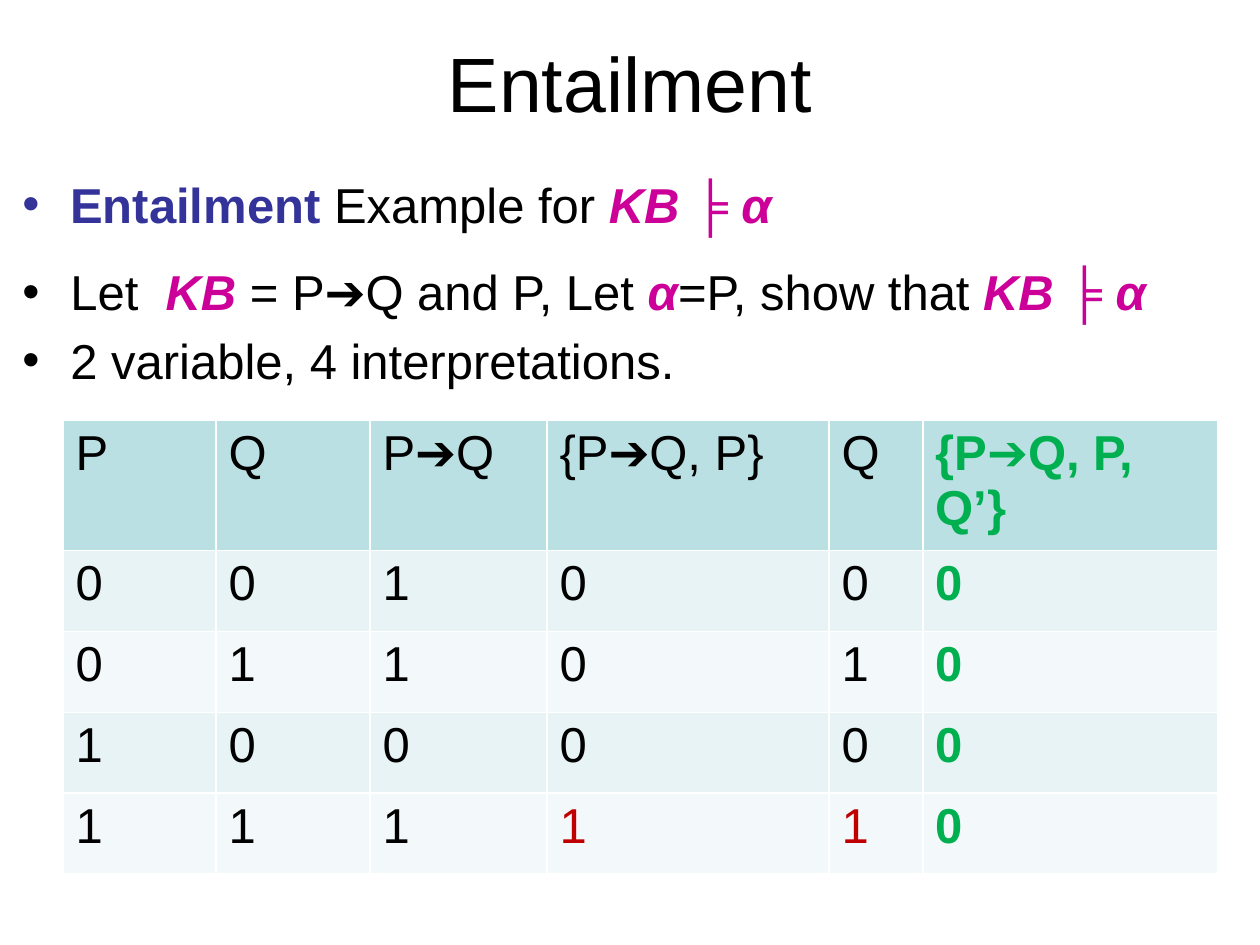
from dataclasses import dataclass

from lxml import etree
from pptx import Presentation
from pptx.dml.color import RGBColor
from pptx.enum.text import MSO_ANCHOR, PP_ALIGN
from pptx.oxml.ns import qn
from pptx.util import Emu, Pt

CENTER, LEFT = PP_ALIGN.CENTER, PP_ALIGN.LEFT
MIDDLE, TOP = MSO_ANCHOR.MIDDLE, MSO_ANCHOR.TOP
PX_PER_INCH = 126


@dataclass(frozen=True)
class Theme:
    """Font, type sizes and colours of the slide."""
    font: str = "Arial"
    title: int = 44
    body: int = 28
    text: str = "000000"
    term: str = "333399"
    symbol: str = "CC0099"
    result: str = "00B050"
    model: str = "C00000"
    border: str = "FFFFFF"
    header: str = "BBE0E3"
    bands: tuple = ("E7F3F4", "F3F9FA")


THEME = Theme()
PLAIN = (THEME.text, False, False)
TERM = (THEME.term, True, False)
SYMBOL = (THEME.symbol, True, True)
TURNSTILE = (THEME.symbol, True, False)
RESULT = (THEME.result, True, False)
MODEL = (THEME.model, False, False)

ENTAILS = [("KB ", SYMBOL), ("╞ ", TURNSTILE), ("α", SYMBOL)]
BULLETS = [
    (0, [("Entailment ", TERM), ("Example for ", PLAIN), *ENTAILS]),
    (16.4, [("Let  ", PLAIN), ("KB ", SYMBOL), ("= P➔Q and P, Let ", PLAIN),
            ("α", SYMBOL), ("=P, show that ", PLAIN), *ENTAILS]),
    (5.6, [("2 variable, 4 interpretations.", PLAIN)]),
]
HEADERS = ["P", "Q", "P➔Q", "{P➔Q, P}", "Q", "{P➔Q, P, Q’}"]
TRUTH_ROWS = ["001000", "011010", "100000", "111110"]
MODEL_CELLS = {(4, 3), (4, 4)}
COLUMN_WIDTHS = [153, 154, 177, 282, 94, 295]
ROW_HEIGHTS = [122, 81, 81, 81, 81]


def px(n):
    """Turn pixels into EMU."""
    return Emu(round(n * 914400 / PX_PER_INCH))


def add_run(p, text, style, size):
    """Add one styled run to a paragraph."""
    color, bold, italic = style
    r = p.add_run()
    r.text = text
    r.font.name = THEME.font
    r.font.size = Pt(size)
    r.font.bold = bold
    r.font.italic = italic
    r.font.color.rgb = RGBColor.from_string(color)


def add_text_frame(slide, x, y, w, h, anchor):
    """Add a wrapping text box and return its text frame."""
    tf = slide.shapes.add_textbox(px(x), px(y), px(w), px(h)).text_frame
    tf.word_wrap = True
    tf.vertical_anchor = anchor
    return tf


def add_title(slide):
    """Add the centred slide title."""
    p = add_text_frame(slide, 63, 3, 1134, 157, MIDDLE).paragraphs[0]
    p.alignment = CENTER
    add_run(p, "Entailment", PLAIN, THEME.title)


def set_bullet(p, indent):
    """Give a paragraph a round bullet with a hanging indent."""
    pPr = p._p.get_or_add_pPr()
    pPr.set("marL", str(px(indent)))
    pPr.set("indent", str(-px(indent)))
    etree.SubElement(pPr, qn("a:buFont")).set("typeface", THEME.font)
    etree.SubElement(pPr, qn("a:buChar")).set("char", "•")


def add_bullets(slide):
    """Add the bulleted statement of the example."""
    tf = add_text_frame(slide, 10, 168, 1197, 693, TOP)
    for i, (space, runs) in enumerate(BULLETS):
        p = tf.add_paragraph() if i else tf.paragraphs[0]
        set_bullet(p, 48)
        p.alignment = LEFT
        p.space_before = Pt(space)
        for text, style in runs:
            add_run(p, text, style, THEME.body)


def set_borders(cell):
    """Draw a thin line on all four sides of a cell."""
    tcPr = cell._tc.get_or_add_tcPr()
    for side in ("a:lnL", "a:lnR", "a:lnT", "a:lnB"):
        ln = etree.SubElement(tcPr, qn(side))
        ln.set("w", str(Pt(1)))
        fill = etree.SubElement(ln, qn("a:solidFill"))
        etree.SubElement(fill, qn("a:srgbClr")).set("val", THEME.border)


def fill_cell(cell, text, style, fill):
    """Write, border and fill one table cell."""
    add_run(cell.text_frame.paragraphs[0], text, style, THEME.body)
    set_borders(cell)
    cell.fill.solid()
    cell.fill.fore_color.rgb = RGBColor.from_string(fill)


def cell_style(row, col):
    """Choose the text style of a truth table cell."""
    if col == len(HEADERS) - 1:
        return RESULT
    return MODEL if (row, col) in MODEL_CELLS else PLAIN


def add_truth_table(slide):
    """Add the truth table of the four interpretations."""
    rows = [HEADERS, *TRUTH_ROWS]
    table = slide.shapes.add_table(
        len(rows), len(HEADERS), px(63), px(420),
        px(sum(COLUMN_WIDTHS)), px(sum(ROW_HEIGHTS))).table
    table.first_row = table.horz_banding = False
    for column, width in zip(table.columns, COLUMN_WIDTHS):
        column.width = px(width)
    for i, values in enumerate(rows):
        table.rows[i].height = px(ROW_HEIGHTS[i])
        fill = THEME.bands[(i - 1) % 2] if i else THEME.header
        for j, value in enumerate(values):
            fill_cell(table.cell(i, j), value, cell_style(i, j), fill)


def main():
    """Build and save the slide."""
    prs = Presentation()
    prs.slide_width, prs.slide_height = px(1260), px(945)
    slide = prs.slides.add_slide(prs.slide_layouts[6])
    add_title(slide)
    add_bullets(slide)
    add_truth_table(slide)
    prs.save("out.pptx")


if __name__ == "__main__":
    main()
